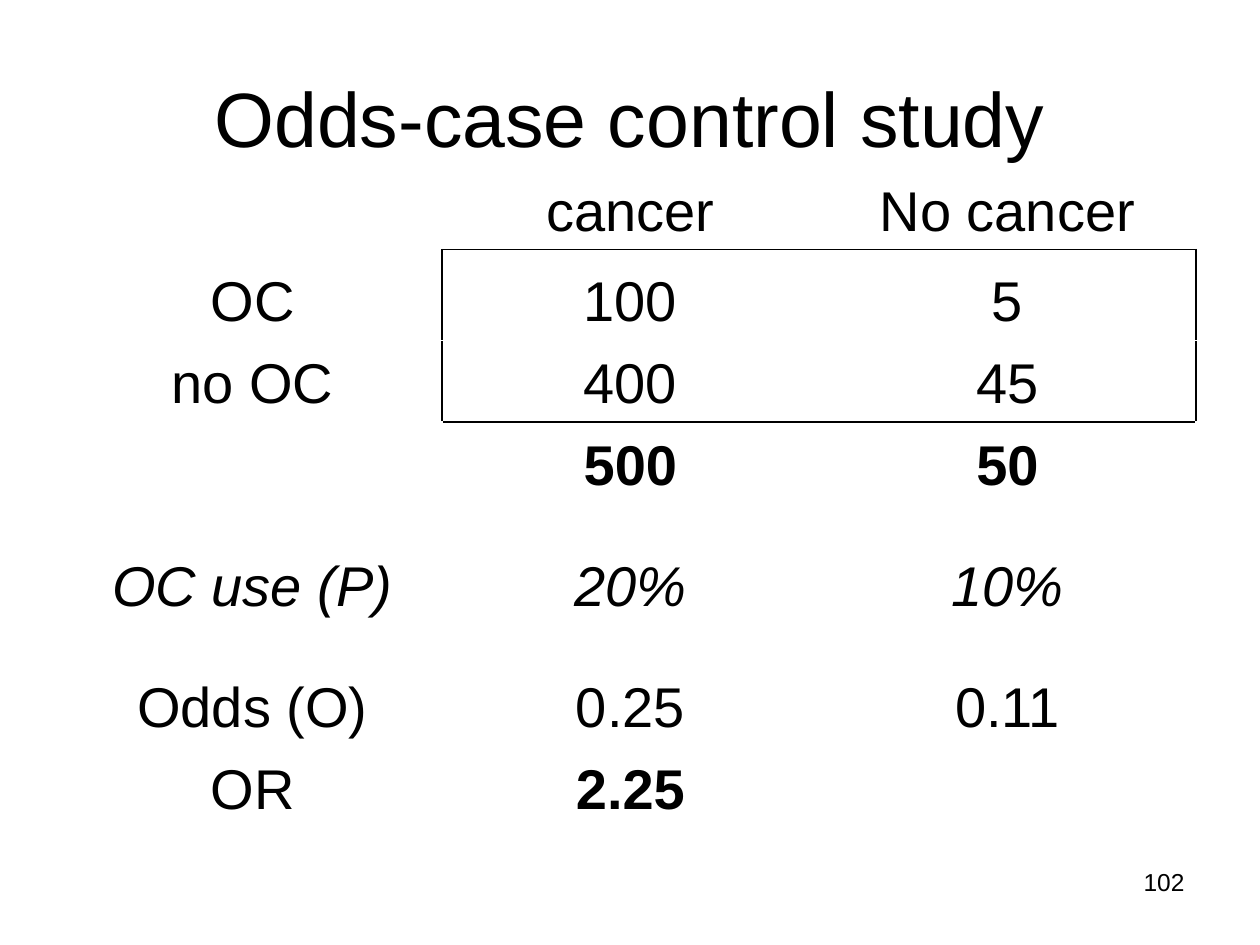
from lxml.etree import SubElement
from pptx import Presentation
from pptx.dml.color import RGBColor
from pptx.enum.text import MSO_ANCHOR as Anchor, PP_ALIGN as Align
from pptx.oxml.ns import qn
from pptx.util import Cm, Pt

FONT = "Arial"
BLACK = "000000"
COLUMN_WIDTHS = [7.64, 7.6, 7.6]
TEXT_ROW, FIRST_BOXED_ROW, SPACER_ROW = 1.65, 1.83, 0.79
ODDS_ROWS = [
    ("", "cancer", "No cancer"),
    ("OC", "100", "5"),
    ("no OC", "400", "45"),
    ("", "500", "50"),
    ("", "", ""),
    ("OC use (P)", "20%", "10%"),
    ("", "", ""),
    ("Odds (O)", "0.25", "0.11"),
    ("OR", "2.25", ""),
]
BOLD_VALUES = {"500", "50", "2.25"}
ITALIC_ROW = 5
SIDES = {"lnL": (0, -1), "lnR": (0, 1), "lnT": (-1, 0), "lnB": (1, 0)}


def rgb(value):
    return RGBColor.from_string(value)


def write(frame, text, size, align, bold=False, italic=False):
    frame.text = text
    paragraph = frame.paragraphs[0]
    paragraph.alignment = align
    for run in paragraph.runs:
        run.font.name = FONT
        run.font.size = Pt(size)
        run.font.bold = bold
        run.font.italic = italic
        run.font.color.rgb = rgb(BLACK)


def place(shape, left, top, width, height):
    shape.left, shape.top = Cm(left), Cm(top)
    shape.width, shape.height = Cm(width), Cm(height)


def in_box(row, column):
    return row in (1, 2) and column in (1, 2)


def outline_box(cell, row, column):
    properties = cell._tc.get_or_add_tcPr()
    for side, (down, across) in SIDES.items():
        if in_box(row, column) != in_box(row + down, column + across):
            line = SubElement(properties, qn(f"a:{side}"), w=str(Pt(1)))
            fill = SubElement(line, qn("a:solidFill"))
            SubElement(fill, qn("a:srgbClr"), val=BLACK)


def row_height(row):
    if row == 1:
        return FIRST_BOXED_ROW
    return TEXT_ROW if any(ODDS_ROWS[row]) else SPACER_ROW


def add_title(slide, text):
    title = slide.shapes.title
    place(title, 1.27, 0.76, 22.86, 3.18)
    title.text_frame.vertical_anchor = Anchor.MIDDLE
    write(title.text_frame, text, 44, Align.CENTER)


def add_odds_table(slide):
    heights = [row_height(row) for row in range(len(ODDS_ROWS))]
    odds = slide.shapes.add_table(
        len(ODDS_ROWS), len(COLUMN_WIDTHS), Cm(1.27), Cm(3.38),
        Cm(sum(COLUMN_WIDTHS)), Cm(sum(heights))).table
    odds.first_row = odds.horz_banding = False
    for column, width in zip(odds.columns, COLUMN_WIDTHS):
        column.width = Cm(width)
    for row, values in enumerate(ODDS_ROWS):
        odds.rows[row].height = Cm(heights[row])
        for column, value in enumerate(values):
            cell = odds.cell(row, column)
            outline_box(cell, row, column)
            cell.fill.background()
            cell.vertical_anchor = Anchor.BOTTOM
            if not value:
                cell.margin_top = cell.margin_bottom = 0
            write(cell.text_frame, value, 32, Align.CENTER,
                  value in BOLD_VALUES, row == ITALIC_ROW)


def add_page_number(slide, number):
    page = slide.shapes.add_textbox(Cm(18.21), Cm(17.35), Cm(5.92), Cm(1.32))
    page.text_frame.word_wrap = True
    write(page.text_frame, number, 14, Align.RIGHT)


def main():
    deck = Presentation()
    deck.slide_width, deck.slide_height = Cm(25.4), Cm(19.05)
    slide = deck.slides.add_slide(deck.slide_layouts[5])
    add_title(slide, "Odds-case control study")
    add_odds_table(slide)
    add_page_number(slide, "102")
    deck.save("out.pptx")


if __name__ == "__main__":
    main()
